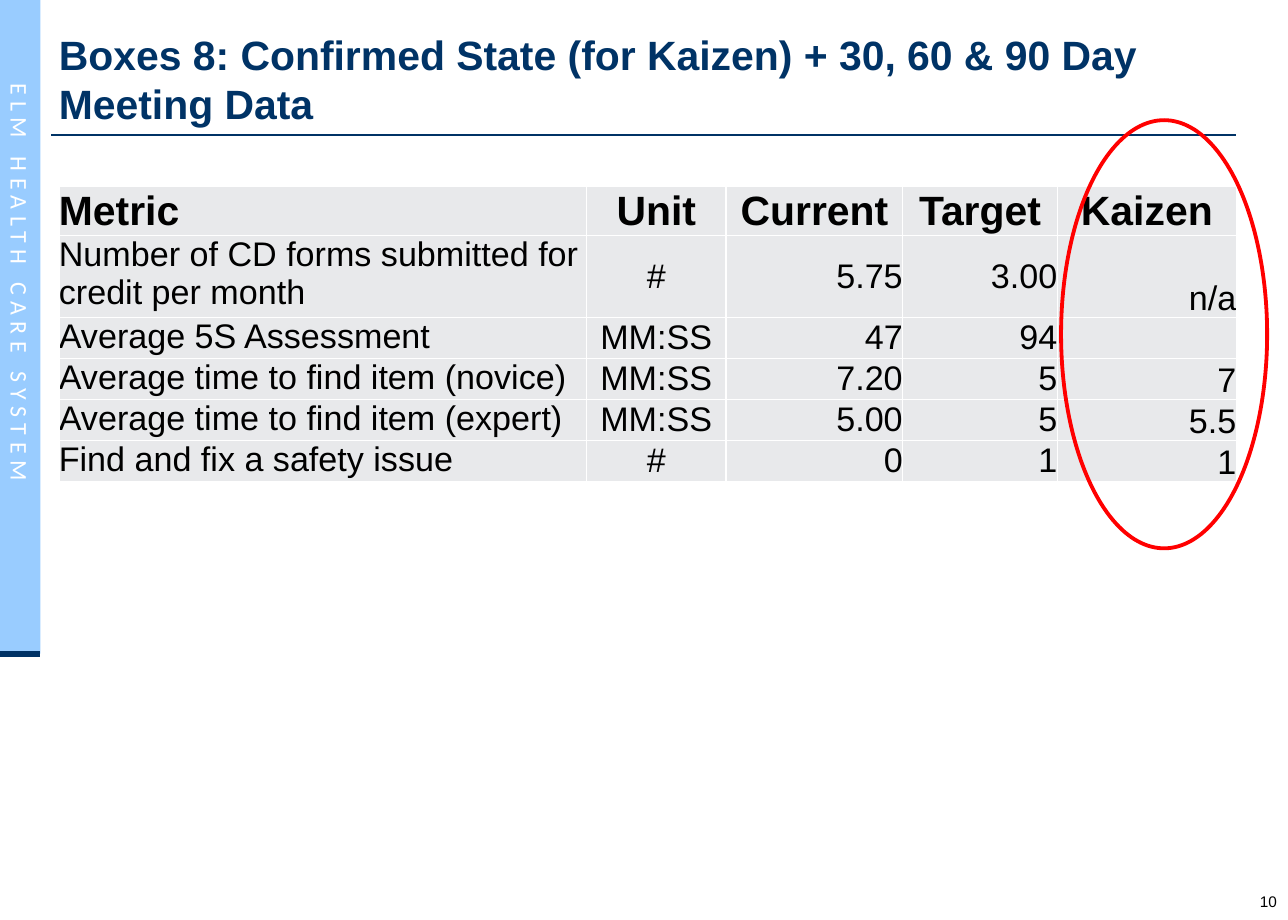
"""Build the Kaizen confirmed state slide with its metric table."""
from pptx import Presentation
from pptx.dml.color import RGBColor
from pptx.enum.shapes import MSO_CONNECTOR as Link, MSO_SHAPE as Shape
from pptx.enum.text import MSO_ANCHOR as Anchor, PP_ALIGN as Align
from pptx.oxml.ns import qn
from pptx.util import Inches, Pt
from lxml.etree import SubElement

NAVY = RGBColor(0x00, 0x33, 0x66)
SKY = RGBColor(0x99, 0xCC, 0xFF)
GREY = RGBColor(0xE8, 0xE9, 0xEB)
RED = RGBColor(0xFF, 0x00, 0x00)
BLACK = RGBColor(0x00, 0x00, 0x00)
WHITE = RGBColor(0xFF, 0xFF, 0xFF)


def style(frame, text, size, color, bold=False, align=Align.LEFT, face="Arial"):
    frame.text = text
    para = frame.paragraphs[0]
    para.alignment = align
    for run in para.runs:
        font = run.font
        font.name, font.size, font.bold = face, Pt(size), bold
        font.color.rgb = color


def add_text(box, pad, text, *look, **more):
    label = slide.shapes.add_textbox(*map(Inches, box))
    frame = label.text_frame
    frame.margin_left = frame.margin_right = Inches(pad[0])
    frame.margin_top = frame.margin_bottom = Inches(pad[1])
    style(frame, text, *look, **more)
    return label


deck = Presentation()
deck.slide_width, deck.slide_height = Inches(10.5), Inches(7.5)
slide = deck.slides.add_slide(deck.slide_layouts[6])

band = slide.shapes.add_shape(Shape.RECTANGLE, 0, 0, Inches(0.33), Inches(5.33))
band.shadow.inherit = False
band.fill.solid()
band.fill.fore_color.rgb = SKY
band.line.fill.background()

for left, right, top, width in ((0, 0.33, 5.33, 3.5), (0.42, 10.08, 1.1, 1.5)):
    rule = slide.shapes.add_connector(
        Link.STRAIGHT, Inches(left), Inches(top), Inches(right), Inches(top))
    rule.line.color.rgb = NAVY
    rule.line.width = Pt(width)
    SubElement(rule._element.spPr, qn("a:effectLst"))

add_text((10.24, 7.27, 0.2, 0.15), (0, 0), "10", 9, BLACK, align=Align.CENTER)

side = add_text((-2.05, 2.62, 4.42, 0.34), (0.1, 0.05),
                "ELM HEALTH CARE SYSTEM", 14, WHITE, face="Calibri")
side.rotation = 90
side.text_frame.word_wrap = True
for run in side.text_frame.paragraphs[0].runs:
    run.font._element.set("spc", "380")

title = add_text((0.48, 0.18, 9.5, 0.91), (0, 0.05),
                 "Boxes 8: Confirmed State (for Kaizen) + 30, 60 & 90 Day Meeting Data",
                 24, NAVY, bold=True)
title.text_frame.word_wrap = True
title.text_frame.vertical_anchor = Anchor.BOTTOM

rows = (
    ("Metric", "Unit", "Current", "Target", "Kaizen"),
    ("Number of CD forms submitted for credit per month", "#", "5.75", "3.00", "n/a"),
    ("Average 5S Assessment", "MM:SS", "47", "94", ""),
    ("Average time to find item (novice)", "MM:SS", "7.20", "5", "7"),
    ("Average time to find item (expert)", "MM:SS", "5.00", "5", "5.5"),
    ("Find and fix a safety issue", "#", "0", "1", "1"),
)
widths = (4.3, 1.14, 1.44, 1.26, 1.46)
heights = (0.21, 0.31, 0.33, 0.33, 0.18, 0.27)
aligns = (Align.LEFT, Align.CENTER, Align.RIGHT, Align.RIGHT, Align.RIGHT)
anchors = (Anchor.TOP, Anchor.MIDDLE, Anchor.MIDDLE, Anchor.MIDDLE, Anchor.BOTTOM)

table = slide.shapes.add_table(
    len(rows), len(widths), Inches(0.48), Inches(1.52),
    Inches(sum(widths)), Inches(sum(heights))).table
table.first_row = table.horz_banding = False
for col, width in zip(table.columns, widths):
    col.width = Inches(width)
for r, (row, height) in enumerate(zip(rows, heights)):
    table.rows[r].height = Inches(height)
    head = r == 0
    for c, text in enumerate(row):
        cell = table.cell(r, c)
        cell.fill.solid()
        cell.fill.fore_color.rgb = GREY
        cell.margin_left = cell.margin_right = 0
        cell.margin_top = cell.margin_bottom = 0
        cell.vertical_anchor = Anchor.MIDDLE if head else anchors[c]
        align = Align.CENTER if head and c else aligns[c]
        style(cell.text_frame, text, 24 if head else 20, BLACK, head, align)

ring = slide.shapes.add_shape(
    Shape.OVAL, Inches(8.65), Inches(0.98), Inches(1.68), Inches(3.49))
ring.shadow.inherit = False
ring.fill.background()
ring.line.color.rgb = RED
ring.line.width = Pt(2.25)

deck.save("out.pptx")
